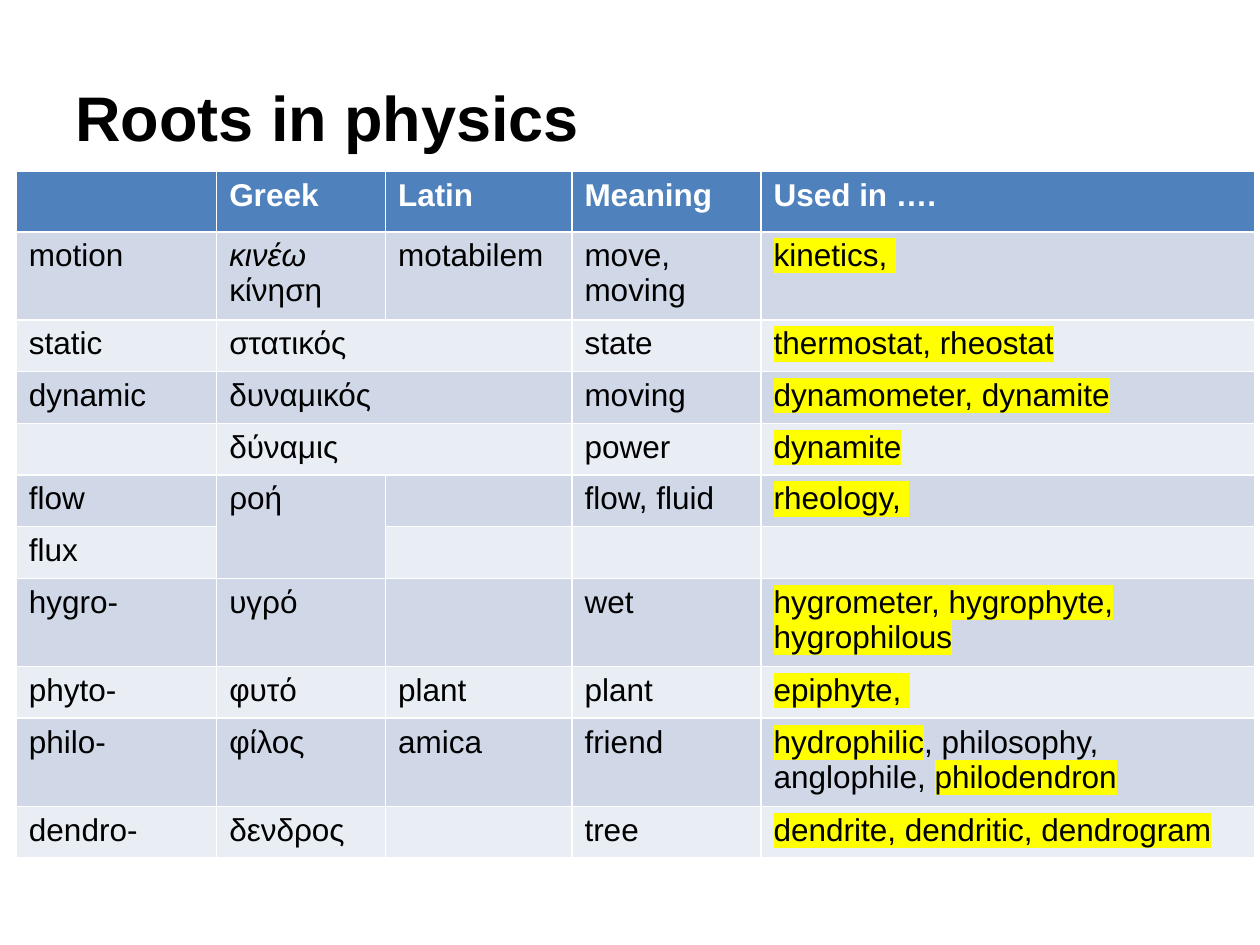
"""Build a slide with a table of Greek and Latin roots used in physics."""
from lxml.etree import SubElement
from pptx import Presentation
from pptx.dml.color import RGBColor
from pptx.enum.text import MSO_ANCHOR
from pptx.oxml.ns import qn
from pptx.util import Inches, Pt

FONT = "Arial"
BLACK = RGBColor(0x00, 0x00, 0x00)
WHITE = RGBColor(0xFF, 0xFF, 0xFF)
YELLOW = RGBColor(0xFF, 0xFF, 0x00)
HEADER_BLUE = RGBColor(0x4F, 0x81, 0xBD)
BANDS = [RGBColor(0xE9, 0xED, 0xF4), RGBColor(0xD0, 0xD8, 0xE8)]

GREEK, USED_IN = 1, 4
COLUMN_WIDTHS = [1.59, 1.34, 1.48, 1.5, 3.92]
HEADER_HEIGHT, LINE_HEIGHT, DOUBLE_HEIGHT = 0.48, 0.41, 0.66
TWO_LINE_ROWS = {1, 7, 9}
MERGES = [((2, 1), (2, 2)), ((3, 1), (3, 2)), ((4, 1), (4, 2)), ((5, 1), (6, 1))]
ROOTS = [
    ["", "Greek", "Latin", "Meaning", "Used in …."],
    ["motion", "*κινέω* κίνηση", "motabilem", "move,\vmoving", "*kinetics, *"],
    ["static", "στατικός", "", "state", "*thermostat, rheostat*"],
    ["dynamic", "δυναμικός", "", "moving", "*dynamometer, dynamite*"],
    ["", "δύναμις", "", "power", "*dynamite*"],
    ["flow", "ροή", "", "flow, fluid", "*rheology, *"],
    ["flux", "", "", "", ""],
    ["hygro-", "υγρό", "", "wet", "*hygrometer, hygrophyte, hygrophilous*"],
    ["phyto-", "φυτό", "plant", "plant", "*epiphyte, *"],
    ["philo-", "φίλος", "amica", "friend",
     "*hydrophilic*, philosophy, anglophile, *philodendron*"],
    ["dendro-", "δενδρoς", "", "tree", "*dendrite, dendritic, dendrogram*"],
]


def style_run(run, size, color, bold):
    run.font.name = FONT
    run.font.size = Pt(size)
    run.font.bold = bold
    run.font.color.rgb = color


def highlight(run):
    mark = SubElement(run._r.get_or_add_rPr(), qn("a:highlight"))
    SubElement(mark, qn("a:srgbClr"), val=str(YELLOW))


deck = Presentation()
deck.slide_width, deck.slide_height = Inches(10), Inches(7.5)
slide = deck.slides.add_slide(deck.slide_layouts[6])

title = slide.shapes.add_textbox(Inches(0.5), Inches(0.3), Inches(9), Inches(1.25)).text_frame
title.word_wrap = True
title.vertical_anchor = MSO_ANCHOR.MIDDLE
title.text = "Roots in physics"
style_run(title.paragraphs[0].runs[0], 36, BLACK, True)

row_heights = [HEADER_HEIGHT] + [
    DOUBLE_HEIGHT if row in TWO_LINE_ROWS else LINE_HEIGHT for row in range(1, len(ROOTS))]
roots_table = slide.shapes.add_table(
    len(ROOTS), len(COLUMN_WIDTHS), Inches(0.13), Inches(1.36),
    Inches(sum(COLUMN_WIDTHS)), Inches(sum(row_heights))).table
for column, width in zip(roots_table.columns, COLUMN_WIDTHS):
    column.width = Inches(width)

for row, entries in enumerate(ROOTS):
    roots_table.rows[row].height = Inches(row_heights[row])
    is_header = row == 0
    for column, entry in enumerate(entries):
        cell = roots_table.cell(row, column)
        cell.fill.solid()
        cell.fill.fore_color.rgb = HEADER_BLUE if is_header else BANDS[row % 2]
        paragraph = cell.text_frame.paragraphs[0]
        plain_start, *pieces = entry.split("*")
        paragraph.text = plain_start
        for position, piece in enumerate(pieces):
            if not piece:
                continue
            run = paragraph.add_run()
            run.text = piece
            if position % 2 == 0 and column == USED_IN:
                highlight(run)
            elif position % 2 == 0 and column == GREEK:
                run.font.italic = True
        for run in paragraph.runs:
            style_run(run, 18, WHITE if is_header else BLACK, is_header)

for first, last in MERGES:
    roots_table.cell(*first).merge(roots_table.cell(*last))

deck.save("out.pptx")
